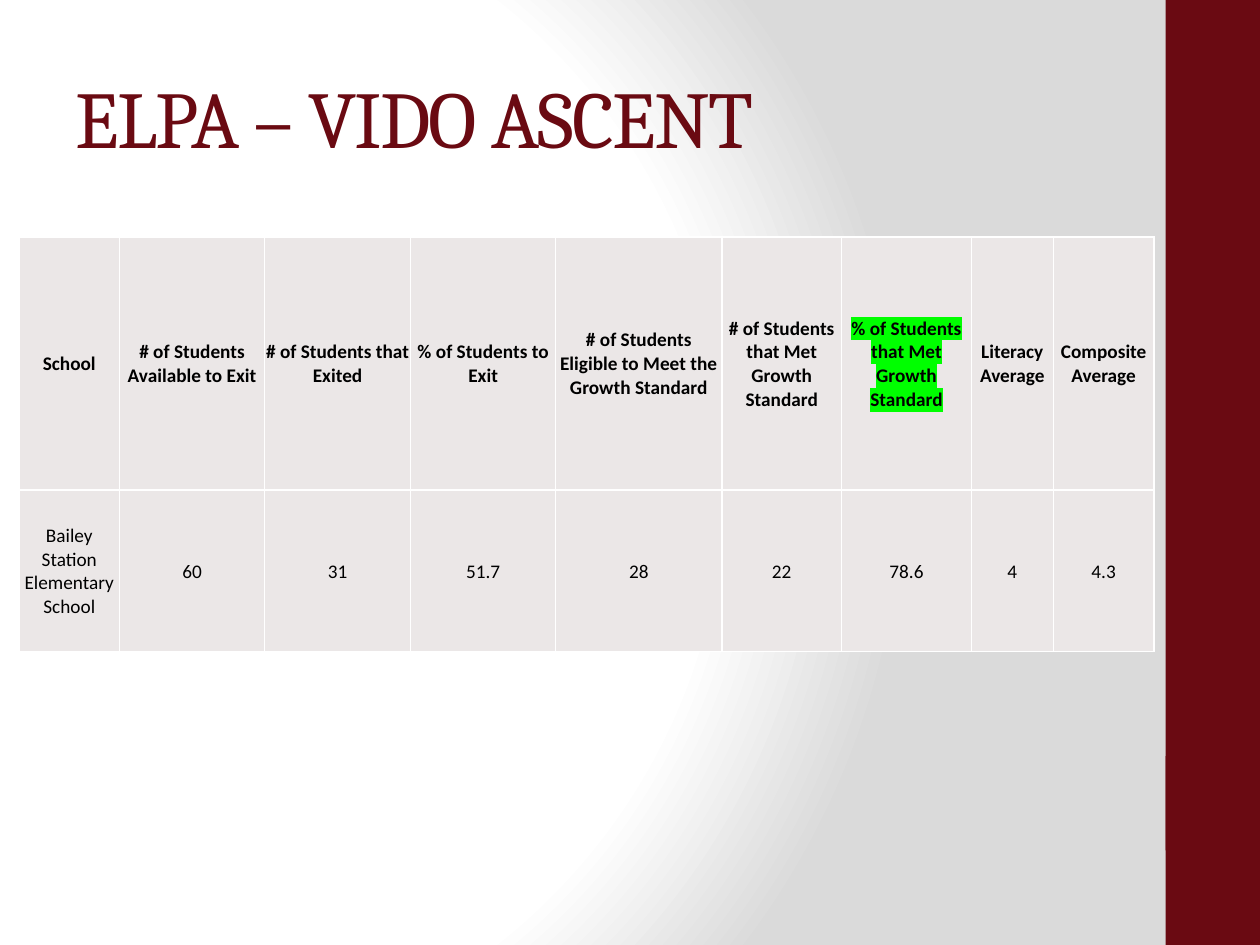
from dataclasses import dataclass

from pptx import Presentation
from pptx.dml.color import RGBColor
from pptx.enum.shapes import MSO_SHAPE as Shape
from pptx.enum.text import MSO_ANCHOR as Anchor, PP_ALIGN as Align
from pptx.oxml import parse_xml
from pptx.oxml.ns import nsdecls
from pptx.util import Pt

EMU_PER_PX = 9144
COLORS = {
    "maroon": "6A0A12",
    "white": "FFFFFF",
    "gray": "DADADA",
    "cell": "EBE7E7",
    "ink": "000000",
    "highlight": "00FF00",
}


@dataclass(frozen=True)
class Column:
    heading: str
    value: str
    width: int
    highlighted: bool = False


@dataclass(frozen=True)
class Band:
    left: int
    top: int
    width: int
    height: int


COLUMNS = [
    Column("School", "Bailey Station Elementary School", 80),
    Column("# of Students Available to Exit", "60", 115),
    Column("# of Students that Exited", "31", 116),
    Column("% of Students to Exit", "51.7", 115),
    Column("# of Students Eligible to Meet the Growth Standard", "28", 132),
    Column("# of Students that Met Growth Standard", "22", 95),
    Column("% of Students that Met Growth Standard", "78.6", 103, True),
    Column("Literacy Average", "4", 65),
    Column("Composite Average", "4.3", 80),
]
ROW_HEIGHTS = [201, 128]
BANDS = [Band(925, 0, 75, 750), Band(925, 600, 75, 75)]


def px(length: int) -> int:
    return length * EMU_PER_PX


def rgb(name: str) -> RGBColor:
    return RGBColor.from_string(COLORS[name])


def paint_background(slide) -> None:
    slide.background.fill.solid()
    properties = slide.background._cSld.bg.bgPr
    stops = "".join(
        f'<a:gs pos="{percent * 1000}"><a:srgbClr val="{COLORS[name]}"/></a:gs>'
        for percent, name in [(0, "white"), (75, "white"), (100, "gray")]
    )
    gradient = parse_xml(
        f'<a:gradFill {nsdecls("a")} rotWithShape="1"><a:gsLst>{stops}</a:gsLst>'
        '<a:path path="circle">'
        '<a:fillToRect l="20000" t="50000" r="100000" b="50000"/>'
        "</a:path></a:gradFill>"
    )
    properties.replace(properties[0], gradient)


def draw_band(slide, band: Band) -> None:
    side = slide.shapes.add_shape(
        Shape.RECTANGLE, px(band.left), px(band.top), px(band.width), px(band.height)
    )
    side.shadow.inherit = False
    side.fill.solid()
    side.fill.fore_color.rgb = rgb("maroon")
    side.line.fill.background()


def write_title(slide, text: str) -> None:
    title = slide.shapes.title
    title.left, title.top, title.width, title.height = map(px, (50, 30, 833, 125))
    title.text_frame.vertical_anchor = Anchor.MIDDLE
    heading = title.text_frame.paragraphs[0]
    heading.alignment = Align.LEFT
    heading.add_run().text = text
    heading.font.name = "Cambria"
    heading.font.size = Pt(46)
    heading.font.color.rgb = rgb("maroon")
    heading.runs[0]._r.get_or_add_rPr().set("spc", "-100")


def add_borders(cell) -> None:
    properties = cell._tc.get_or_add_tcPr()
    for side in ("lnL", "lnR", "lnT", "lnB"):
        properties.append(parse_xml(
            f'<a:{side} {nsdecls("a")} w="{Pt(1)}"><a:solidFill>'
            f'<a:srgbClr val="{COLORS["white"]}"/></a:solidFill></a:{side}>'
        ))


def fill_cell(cell, text: str, bold: bool, highlighted: bool) -> None:
    add_borders(cell)
    cell.fill.solid()
    cell.fill.fore_color.rgb = rgb("cell")
    cell.vertical_anchor = Anchor.MIDDLE
    cell.margin_left = cell.margin_right = cell.margin_top = px(1)
    cell.margin_bottom = 0
    entry = cell.text_frame.paragraphs[0]
    entry.alignment = Align.CENTER
    entry.add_run().text = text
    entry.font.name = "Calibri"
    entry.font.size = Pt(11)
    entry.font.bold = bold
    entry.font.color.rgb = rgb("ink")
    if highlighted:
        entry.runs[0]._r.get_or_add_rPr().append(parse_xml(
            f'<a:highlight {nsdecls("a")}>'
            f'<a:srgbClr val="{COLORS["highlight"]}"/></a:highlight>'
        ))


def draw_results(slide, columns: list[Column]) -> None:
    width = sum(column.width for column in columns)
    results = slide.shapes.add_table(
        len(ROW_HEIGHTS), len(columns), px(15), px(188), px(width), px(sum(ROW_HEIGHTS))
    ).table
    results.horz_banding = False
    for row, height in zip(results.rows, ROW_HEIGHTS):
        row.height = px(height)
    for index, column in enumerate(columns):
        results.columns[index].width = px(column.width)
        fill_cell(results.cell(0, index), column.heading, True, column.highlighted)
        fill_cell(results.cell(1, index), column.value, False, False)


def main() -> None:
    presentation = Presentation()
    presentation.slide_width, presentation.slide_height = px(1000), px(750)
    slide = presentation.slides.add_slide(presentation.slide_layouts[5])
    paint_background(slide)
    for band in BANDS:
        draw_band(slide, band)
    write_title(slide, "ELPA – VIDO ASCENT")
    draw_results(slide, COLUMNS)
    presentation.save("out.pptx")


if __name__ == "__main__":
    main()
